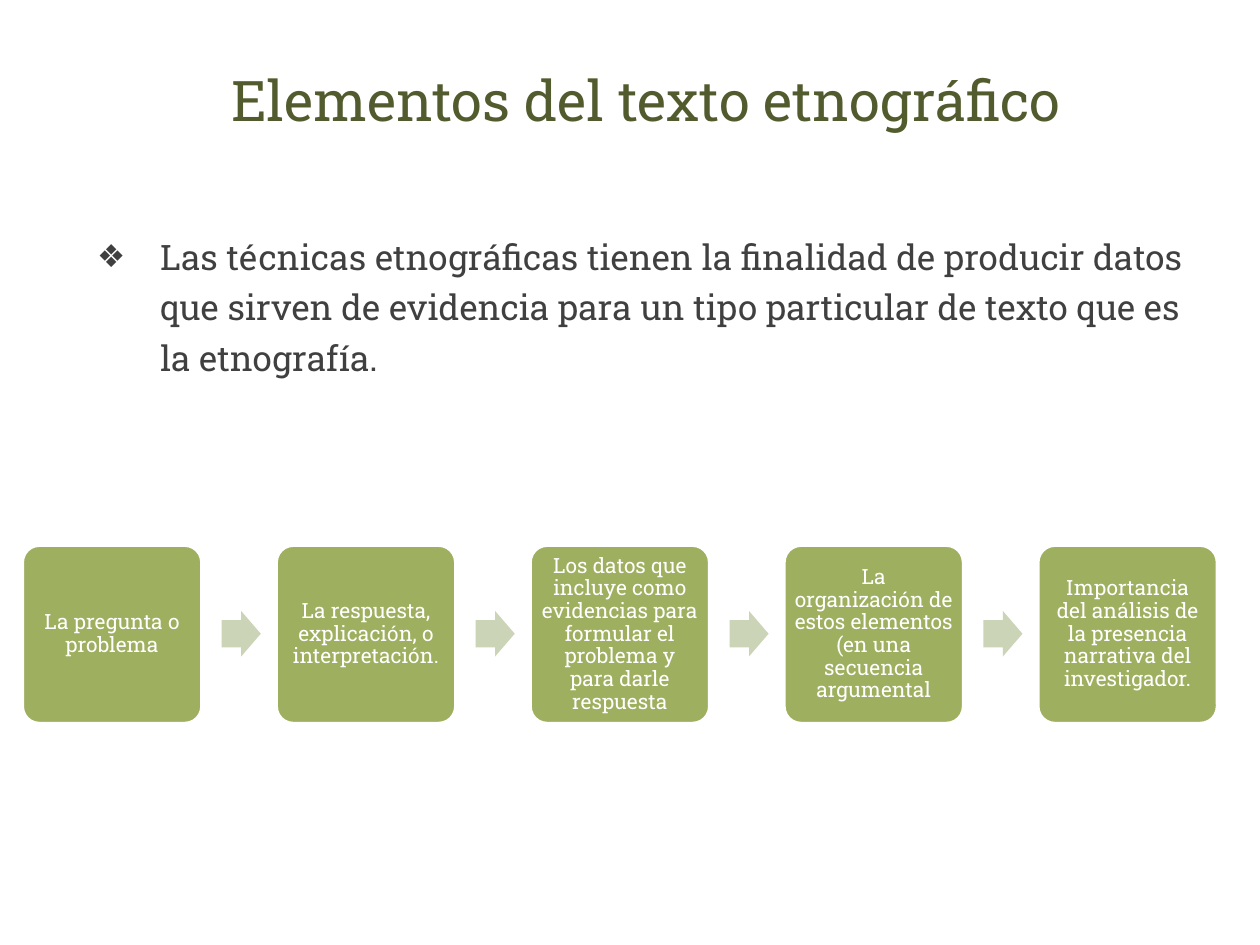
from dataclasses import dataclass

from lxml import etree
from pptx import Presentation
from pptx import util as u
from pptx.dml.color import RGBColor
from pptx.enum import shapes, text
from pptx.oxml.ns import qn

FONT = "Roboto Slab"
TITLE = "Elementos del texto etnográfico"
BODY = (
    "Las técnicas etnográficas tienen la finalidad de producir datos que sirven "
    "de evidencia para un tipo particular de texto que es la etnografía."
)
STEPS = [
    "La pregunta o problema",
    "La respuesta, explicación, o interpretación.",
    "Los datos que incluye como evidencias para formular el problema y para darle respuesta",
    "La organización de estos elementos (en una secuencia argumental",
    "Importancia del análisis de la presencia narrativa del investigador.",
]
STEP_LEFT, STEP_PITCH = 12.24, 145.08
ARROW_OFFSET = 114.48


@dataclass(frozen=True)
class Box:
    left: float
    top: float
    width: float
    height: float

    def lengths(self) -> list:
        return [u.Pt(value) for value in (self.left, self.top, self.width, self.height)]


@dataclass(frozen=True)
class TextStyle:
    size: float
    color: str
    frame: dict
    paragraph: dict


TITLE_STYLE = TextStyle(
    32, "515B2D",
    {"vertical_anchor": text.MSO_ANCHOR.MIDDLE},
    {"alignment": text.PP_ALIGN.CENTER},
)
BODY_STYLE = TextStyle(
    20, "404040",
    {"vertical_anchor": text.MSO_ANCHOR.TOP},
    {"alignment": text.PP_ALIGN.LEFT, "line_spacing": 1.2, "space_before": u.Pt(24)},
)
STEP_STYLE = TextStyle(
    12, "FFFFFF",
    {"vertical_anchor": text.MSO_ANCHOR.MIDDLE}
    | {f"margin_{side}": u.Pt(3.6) for side in ("left", "top", "right", "bottom")},
    {"alignment": text.PP_ALIGN.CENTER, "line_spacing": 0.9, "space_after": u.Pt(4.2)},
)


def rgb(color: str) -> RGBColor:
    return RGBColor.from_string(color)


def set_attributes(target, values: dict) -> None:
    for name, value in values.items():
        setattr(target, name, value)


def write_text(shape, wording: str, style: TextStyle):
    frame = shape.text_frame
    set_attributes(frame, {"word_wrap": True, "auto_size": text.MSO_AUTO_SIZE.NONE} | style.frame)
    paragraph = frame.paragraphs[0]
    set_attributes(paragraph, style.paragraph)
    run = paragraph.add_run()
    run.text = wording
    set_attributes(run.font, {"name": FONT, "size": u.Pt(style.size)})
    run.font.color.rgb = rgb(style.color)
    return paragraph


def fill_placeholder(shape, box: Box, wording: str, style: TextStyle):
    set_attributes(shape, dict(zip(("left", "top", "width", "height"), box.lengths())))
    return write_text(shape, wording, style)


def add_bullet(paragraph, character: str, percent: int, indent: float) -> None:
    properties = paragraph._p.get_or_add_pPr()
    properties.set("marL", str(u.Pt(indent)))
    properties.set("indent", str(-u.Pt(indent)))
    etree.SubElement(properties, qn("a:buSzPct"), val=str(percent * 1000))
    etree.SubElement(properties, qn("a:buChar"), char=character)


def add_filled_shape(slide, kind, box: Box, color: str, adjustments: list[float]):
    shape = slide.shapes.add_shape(kind, *box.lengths())
    shape.shadow.inherit = False
    shape.fill.solid()
    shape.fill.fore_color.rgb = rgb(color)
    for index, value in enumerate(adjustments):
        shape.adjustments[index] = value
    return shape


def add_step(slide, left: float, wording: str) -> None:
    box = Box(left, 311.04, 103.68, 102.96)
    card = add_filled_shape(slide, shapes.MSO_SHAPE.ROUNDED_RECTANGLE, box, "9EB060", [0.1])
    card.line.color.rgb = rgb("FFFFFF")
    card.line.width = u.Pt(3)
    write_text(card, wording, STEP_STYLE)


def add_arrow(slide, left: float) -> None:
    box = Box(left, 349.2, 22.32, 25.92)
    arrow = add_filled_shape(slide, shapes.MSO_SHAPE.RIGHT_ARROW, box, "CCD4B7", [0.6, 0.5])
    arrow.line.fill.background()


def main() -> None:
    presentation = Presentation()
    presentation.slide_width, presentation.slide_height = u.Pt(720), u.Pt(540)
    slide = presentation.slides.add_slide(presentation.slide_layouts[1])

    fill_placeholder(slide.shapes.title, Box(48.24, 18, 642.24, 77.76), TITLE, TITLE_STYLE)
    body = fill_placeholder(
        slide.placeholders[1], Box(48.24, 126, 642.24, 356.4), BODY, BODY_STYLE
    )
    add_bullet(body, "❖", percent=90, indent=36)

    for index, wording in enumerate(STEPS):
        left = STEP_LEFT + index * STEP_PITCH
        add_step(slide, left, wording)
        if index < len(STEPS) - 1:
            add_arrow(slide, left + ARROW_OFFSET)

    presentation.save("out.pptx")


if __name__ == "__main__":
    main()
